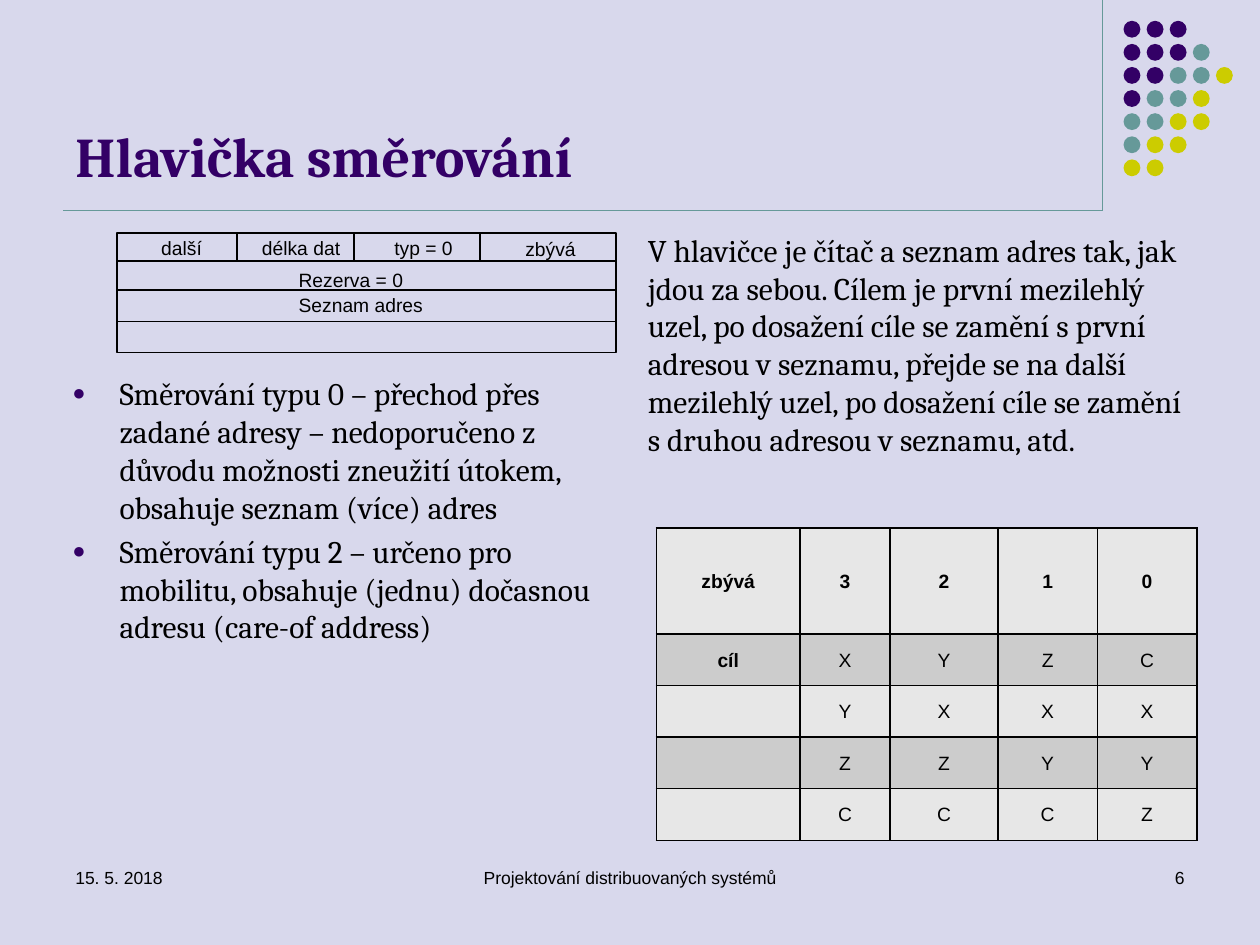
from lxml.etree import SubElement
from pptx import Presentation
from pptx.dml.color import RGBColor
from pptx.enum.shapes import MSO_CONNECTOR, MSO_SHAPE
from pptx.enum.text import MSO_ANCHOR, PP_ALIGN
from pptx.oxml import parse_xml
from pptx.oxml.ns import nsdecls, qn
from pptx.util import Cm, Pt

color = RGBColor.from_string
PURPLE, TEAL, YELLOW, BLACK = "330066", "669999", "CCCC00", "000000"

deck = Presentation()
deck.slide_width, deck.slide_height = Cm(25.4), Cm(19.05)
page = deck.slides.add_slide(deck.slide_layouts[6])
page.background.fill.solid()
page.background.fill.fore_color.rgb = color("D8D8EC")


def add_line(x1, y1, x2, y2, line_color, width):
    line = page.shapes.add_connector(
        MSO_CONNECTOR.STRAIGHT, Cm(x1), Cm(y1), Cm(x2), Cm(y2))
    line.line.color.rgb = color(line_color)
    line.line.width = Pt(width)
    SubElement(line._element.spPr, qn("a:effectLst"))


def add_text(left, top, width, height, texts, font, size,
             text_color=BLACK, align=PP_ALIGN.LEFT):
    box = page.shapes.add_textbox(Cm(left), Cm(top), Cm(width), Cm(height))
    frame = box.text_frame
    frame.word_wrap = True
    frame.text = "\n".join(texts)
    for para in frame.paragraphs:
        para.alignment = align
        para.font.name, para.font.size = font, Pt(size)
        para.font.color.rgb = color(text_color)
    return frame


# Corner rules and dot pattern
add_line(22.23, 0, 22.23, 4.24, TEAL, 0.75)
add_line(1.27, 4.24, 22.23, 4.24, TEAL, 0.75)
dot_colors = {"P": PURPLE, "T": TEAL, "Y": YELLOW}
dot_rows = ["PPP", "PPPT", "PPTTY", "PTTY", "TTYY", "TYY", "YY"]
dot_pitch = 3.26 / 7
for row, letters in enumerate(dot_rows):
    for col, letter in enumerate(letters):
        dot = page.shapes.add_shape(
            MSO_SHAPE.OVAL, Cm(22.65 + col * dot_pitch),
            Cm(0.42 + row * dot_pitch), Cm(0.34), Cm(0.34))
        dot.shadow.inherit = False
        dot.fill.solid()
        dot.fill.fore_color.rgb = color(dot_colors[letter])
        dot.line.fill.background()

# Title
title = add_text(1.27, 0.33, 20.96, 3.6, ["Hlavička směrování"],
                 "Cambria", 32, PURPLE)
title.vertical_anchor = MSO_ANCHOR.BOTTOM
title.paragraphs[0].font.bold = True

# Bulleted routing types
routing_types = add_text(1.21, 7.42, 11.63, 9.53, [
    "Směrování typu 0 – přechod přes zadané adresy – nedoporučeno "
    "z důvodu možnosti zneužití útokem, obsahuje seznam (více) adres",
    "Směrování typu 2 – určeno pro mobilitu, obsahuje (jednu) dočasnou "
    "adresu (care-of address)",
], "Cambria", 18)
for para in routing_types.paragraphs:
    para.space_before = Pt(3.6)
    props = para._p.get_or_add_pPr()
    props.set("marL", str(Cm(0.95)))
    props.set("indent", str(-Cm(0.95)))
    bullet_color = SubElement(props, qn("a:buClr"))
    SubElement(bullet_color, qn("a:srgbClr"), val=PURPLE)
    SubElement(props, qn("a:buSzPct"), val="70000")
    SubElement(props, qn("a:buFont"), typeface="Arial")
    SubElement(props, qn("a:buChar"), char="●")

# Footer
for left, width, text, align in [
    (1.27, 5.93, "15. 5. 2018", PP_ALIGN.LEFT),
    (8.68, 8.04, "Projektování distribuovaných systémů", PP_ALIGN.CENTER),
    (18.2, 5.93, "6", PP_ALIGN.RIGHT),
]:
    add_text(left, 17.35, width, 1.27, [text], "Arial", 10, align=align)

# Header layout diagram
header = page.shapes.add_shape(
    MSO_SHAPE.RECTANGLE, Cm(2.36), Cm(4.7), Cm(10.06), Cm(2.41))
header.shadow.inherit = False
header.fill.background()
header.line.color.rgb = color(BLACK)
header.line.width = Pt(1)
for y in (5.26, 5.85, 6.48):
    add_line(2.36, y, 12.42, y, BLACK, 1)
for x in (4.78, 7.14, 9.68):
    add_line(x, 4.7, x, 5.26, BLACK, 1)
for left, top, width, text in [
    (3, 4.61, 1.5, "další"),
    (5.03, 4.61, 2.2, "délka dat"),
    (7.7, 4.61, 1.9, "typ = 0"),
    (10.34, 4.63, 1.7, "zbývá"),
    (5.77, 5.26, 2.8, "Rezerva = 0"),
    (5.77, 5.77, 3.2, "Seznam adres"),
]:
    label = add_text(left, top, width, 0.86, [text], "Arial", 11)
    label.paragraphs[0].line_spacing = 1.06
    label.paragraphs[0].space_after = Pt(8)

# Explanation
explanation = add_text(12.81, 4.53, 11.63, 5.69, [
    "V hlavičce je čítač a seznam adres tak, jak jdou za sebou. Cílem je "
    "první mezilehlý uzel, po dosažení cíle se zamění s první adresou "
    "v seznamu, přejde se na další mezilehlý uzel, po dosažení cíle se "
    "zamění s druhou adresou v seznamu, atd.",
], "Cambria", 18)
explanation.paragraphs[0].space_before = Pt(3.6)

# Address table
address_rows = [
    ["zbývá", "3", "2", "1", "0"],
    ["cíl", "X", "Y", "Z", "C"],
    ["", "Y", "X", "X", "X"],
    ["", "Z", "Z", "Y", "Y"],
    ["", "C", "C", "C", "Z"],
]
table = page.shapes.add_table(
    5, 5, Cm(13.23), Cm(10.64), Cm(10.9), Cm(6.3)).table
for column, width in zip(table.columns, (2.9, 1.81, 2.18, 2, 2.01)):
    column.width = Cm(width)
for table_row, height in zip(table.rows, (2.14, 1.04, 1.04, 1.04, 1.04)):
    table_row.height = Cm(height)
for row, texts in enumerate(address_rows):
    for col, text in enumerate(texts):
        cell = table.cell(row, col)
        cell.text = text
        cell.vertical_anchor = MSO_ANCHOR.MIDDLE
        cell.margin_left = cell.margin_right = Cm(0.18)
        cell.margin_top = cell.margin_bottom = 0
        cell.fill.solid()
        cell.fill.fore_color.rgb = color("CCCCCC" if row % 2 else "E7E7E7")
        para = cell.text_frame.paragraphs[0]
        para.alignment = PP_ALIGN.CENTER
        para.line_spacing = 1.07
        para.font.name, para.font.size = "Arial", Pt(11)
        para.font.bold = row == 0 or col == 0
        para.font.color.rgb = color(BLACK)
        cell_props = cell._tc.get_or_add_tcPr()
        for index, side in enumerate("LRTB"):
            cell_props.insert(index, parse_xml(
                f'<a:ln{side} {nsdecls("a")} w="{Pt(1)}"><a:solidFill>'
                f'<a:srgbClr val="{BLACK}"/></a:solidFill></a:ln{side}>'))

deck.save("out.pptx")
